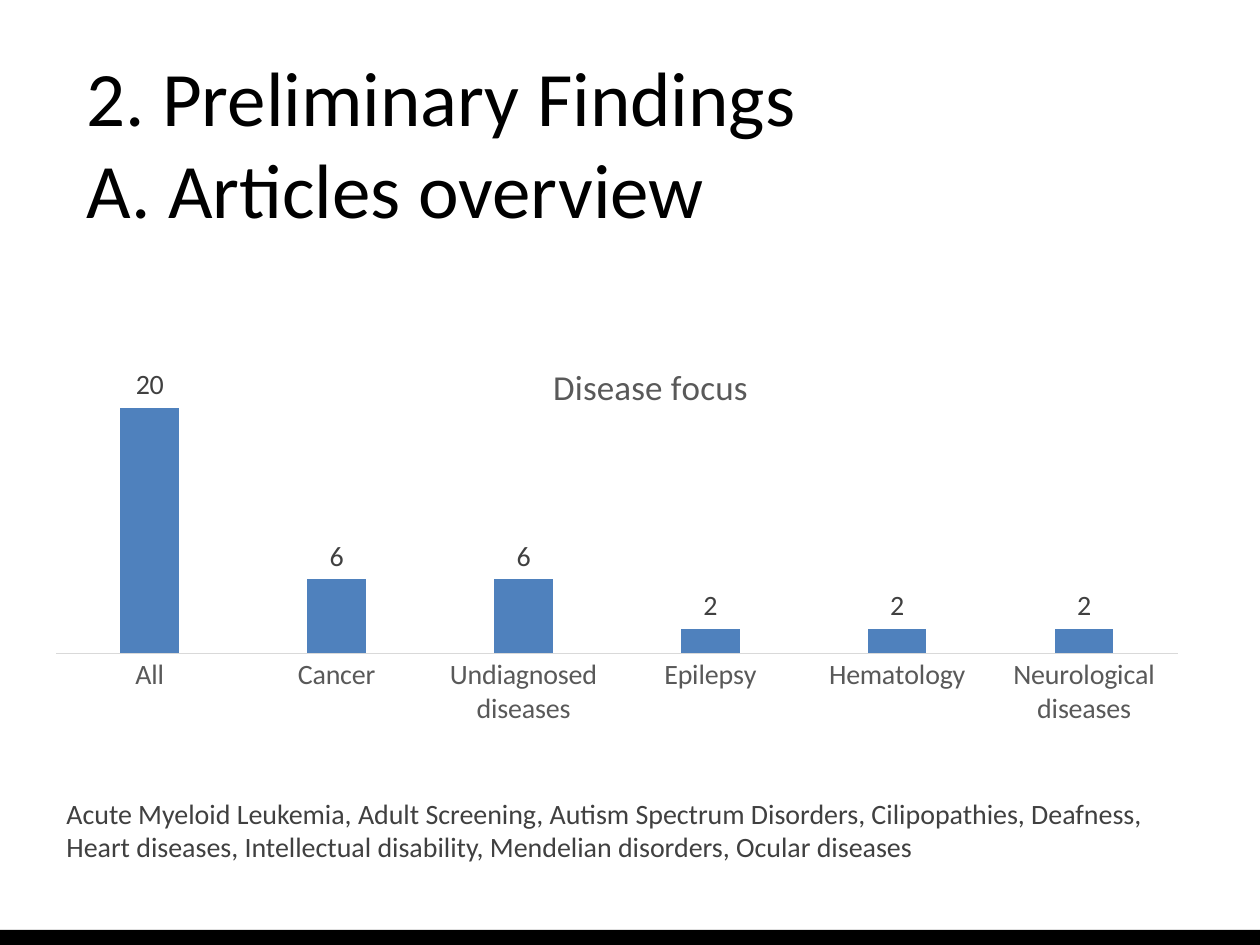
"""Build the slide on the disease focus of the reviewed articles."""
import pptx
import pptx.chart.data
import pptx.dml.color
import pptx.enum.chart
import pptx.enum.shapes
import pptx.enum.text
import pptx.oxml
import pptx.oxml.ns
import pptx.util

PX = 914400 // 126
FACE = "Calibri"


def paint(code):
    return pptx.dml.color.RGBColor.from_string(code)


def style(font, size, code):
    font.name = FACE
    font.size = pptx.util.Pt(size)
    font.bold = False
    font.color.rgb = paint(code)


deck = pptx.Presentation()
deck.slide_width = 1260 * PX
deck.slide_height = 945 * PX
slide = deck.slides.add_slide(deck.slide_layouts[6])

band = slide.shapes.add_shape(
    pptx.enum.shapes.MSO_SHAPE.RECTANGLE, 0, 930 * PX, 1260 * PX, 15 * PX)
band.shadow.inherit = False
band.fill.solid()
band.fill.fore_color.rgb = paint("000000")
band.line.fill.background()

anchor = pptx.enum.text.MSO_ANCHOR
texts = [
    ((74, 50, 1128, 183), anchor.MIDDLE, 44, "000000",
     ["2. Preliminary Findings", "A. Articles overview"]),
    ((54, 790, 1167, 81), anchor.TOP, 16, "404040",
     ["Acute Myeloid Leukemia, Adult Screening, Autism Spectrum Disorders, "
      "Cilipopathies, Deafness, Heart diseases, Intellectual disability, "
      "Mendelian disorders, Ocular diseases"]),
]
for area, hold, size, code, lines in texts:
    frame = slide.shapes.add_textbox(*[n * PX for n in area]).text_frame
    frame.word_wrap = True
    frame.vertical_anchor = hold
    for i, line in enumerate(lines):
        para = frame.add_paragraph() if i else frame.paragraphs[0]
        run = para.add_run()
        run.text = line
        style(run.font, size, code)

data = pptx.chart.data.CategoryChartData()
data.categories = ["All", "Cancer", "Undiagnosed diseases", "Epilepsy",
                   "Hematology", "Neurological diseases"]
data.add_series("Series 1", [20, 6, 6, 2, 2, 2])
kinds = pptx.enum.chart
chart = slide.shapes.add_chart(
    kinds.XL_CHART_TYPE.COLUMN_CLUSTERED,
    33 * PX, 255 * PX, 1168 * PX, 480 * PX, data).chart
style(chart.font, 10, "000000")
chart.has_legend = False

chart.has_title = True
run = chart.chart_title.text_frame.paragraphs[0].add_run()
run.text = "Disease focus"
style(run.font, 20, "595959")

plot = chart.plots[0]
plot.gap_width = 219
plot.overlap = -27
plot.vary_by_categories = False
fill = plot.series[0].format.fill
fill.solid()
fill.fore_color.rgb = paint("4F81BD")
plot.has_data_labels = True
labels = plot.data_labels
labels.show_value = True
labels.position = kinds.XL_LABEL_POSITION.OUTSIDE_END
style(labels.font, 16, "404040")

axis = chart.category_axis
axis.major_tick_mark = kinds.XL_TICK_MARK.NONE
axis.format.line.color.rgb = paint("D9D9D9")
axis.format.line.width = pptx.util.Pt(0.75)
style(axis.tick_labels.font, 16, "595959")
scale = chart.value_axis
scale.minimum_scale = 0
scale.maximum_scale = 25
scale.has_major_gridlines = False
scale.visible = False

qn = pptx.oxml.ns.qn
root = chart.element
title = root.find(".//" + qn("c:title"))
title.find(qn("c:overlay")).set("val", "1")
area = root.find(".//" + qn("c:plotArea"))
spots = [
    (title, 1, [("xMode", "edge"), ("yMode", "edge"),
                ("x", 0.44), ("y", 0.21)]),
    (area, 0, [("layoutTarget", "inner"), ("xMode", "edge"),
               ("yMode", "edge"), ("x", 0.02), ("y", 0.19),
               ("w", 0.96), ("h", 0.64)]),
]
for node, rank, pairs in spots:
    for old in node.findall(qn("c:layout")):
        node.remove(old)
    inner = "".join(f'<c:{key} val="{val}"/>' for key, val in pairs)
    node.insert(rank, pptx.oxml.parse_xml(
        f'<c:layout {pptx.oxml.ns.nsdecls("c")}>'
        f"<c:manualLayout>{inner}</c:manualLayout></c:layout>"))

deck.save("out.pptx")
